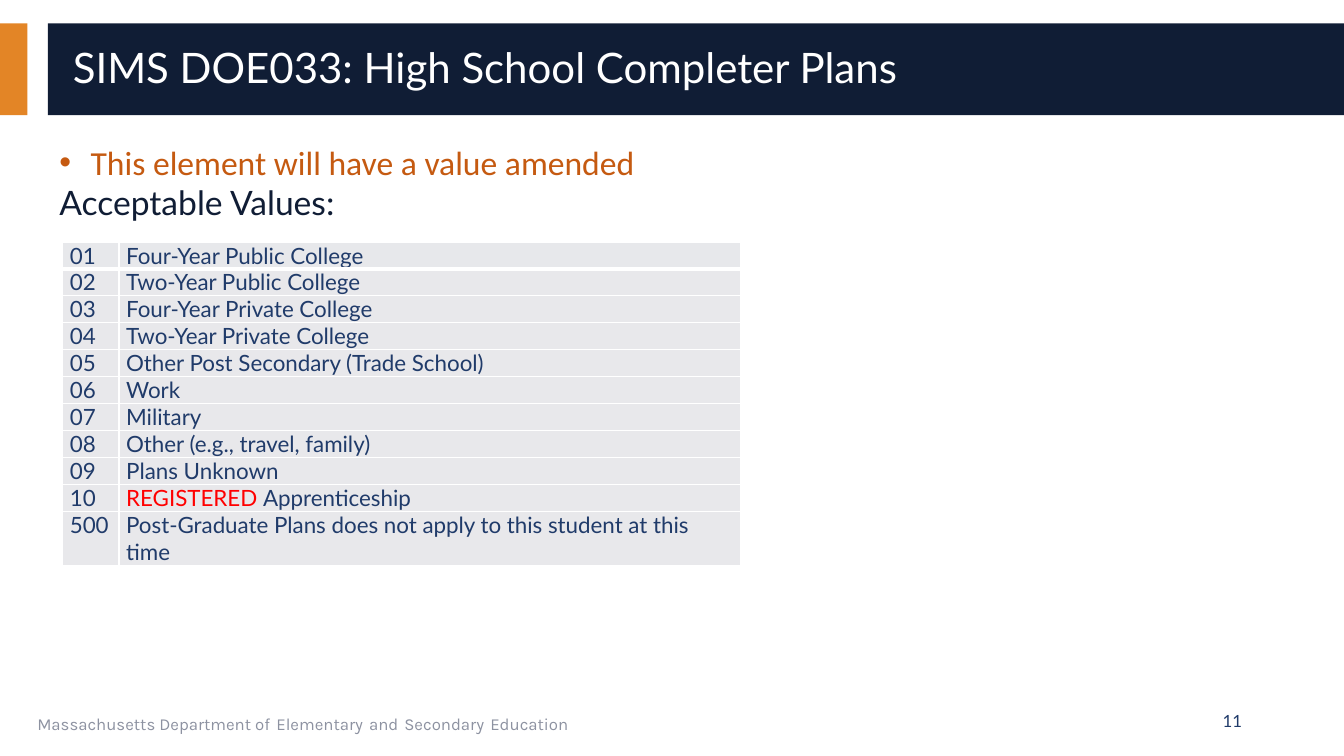
from dataclasses import dataclass

import lxml.etree
import pptx
import pptx.dml.color
import pptx.enum.shapes
import pptx.enum.text
import pptx.oxml.ns
import pptx.util
from pptx.dml.color import RGBColor
from pptx.enum.text import MSO_ANCHOR, MSO_AUTO_SIZE, PP_ALIGN
from pptx.util import Cm

NAVY = RGBColor(0x10, 0x1D, 0x35)
BLUE = RGBColor(0x20, 0x3B, 0x6A)
ORANGE = RGBColor(0xE3, 0x85, 0x26)
RUST = RGBColor(0xC5, 0x5A, 0x11)
RED = RGBColor(0xFF, 0x00, 0x00)
GREY = RGBColor(0x8D, 0x92, 0xA1)
CELL_GREY = RGBColor(0xE8, 0xE8, 0xEB)
FIRST_ROW_GREY = RGBColor(0xE7, 0xE8, 0xEB)
WHITE = RGBColor(0xFF, 0xFF, 0xFF)


@dataclass(frozen=True)
class Bar:
    left: float
    width: float
    color: RGBColor


@dataclass(frozen=True)
class PlanValue:
    code: str
    meaning: str
    amended: str = ""
    height: float = 0.68


BARS = [Bar(0, 0.69, ORANGE), Bar(1.21, 32.66, NAVY)]

PLAN_VALUES = [
    PlanValue("01", "Four-Year Public College", height=0.66),
    PlanValue("02", "Two-Year Public College"),
    PlanValue("03", "Four-Year Private College"),
    PlanValue("04", "Two-Year Private College"),
    PlanValue("05", "Other Post Secondary (Trade School)"),
    PlanValue("06", "Work"),
    PlanValue("07", "Military"),
    PlanValue("08", "Other (e.g., travel, family)"),
    PlanValue("09", "Plans Unknown"),
    PlanValue("10", "Apprenticeship", amended="REGISTERED "),
    PlanValue("500", "Post-Graduate Plans does not apply to this student at this time",
              height=1.35),
]


def write(paragraph, text: str, *, size: float = 16, color: RGBColor = BLUE,
          font: str = "Lato") -> None:
    run = paragraph.add_run()
    run.text = text
    run.font.size = pptx.util.Pt(size)
    run.font.name = font
    run.font.color.rgb = color


def place(shape, left: float, top: float, width: float, height: float) -> None:
    shape.left, shape.top = Cm(left), Cm(top)
    shape.width, shape.height = Cm(width), Cm(height)


def add_xml(parent, tag: str, **attributes: str):
    return lxml.etree.SubElement(parent, pptx.oxml.ns.qn(tag), attributes)


def set_bullet(paragraph, mark: str, indent: float) -> None:
    properties = paragraph._p.get_or_add_pPr()
    properties.set("marL", str(Cm(indent)))
    properties.set("indent", str(-Cm(indent)))
    if mark:
        add_xml(properties, "a:buFont", typeface="Arial")
        add_xml(properties, "a:buChar", char=mark)
    else:
        add_xml(properties, "a:buNone")
    paragraph.space_before = pptx.util.Pt(0)


def format_cell(cell, fill: RGBColor, bottom_width: float) -> None:
    properties = cell._tc.get_or_add_tcPr()
    for side, width in (("L", 1), ("R", 1), ("T", 1), ("B", bottom_width)):
        border = add_xml(properties, f"a:ln{side}", w=str(pptx.util.Pt(width)))
        add_xml(add_xml(border, "a:solidFill"), "a:srgbClr", val=str(WHITE))
    cell.fill.solid()
    cell.fill.fore_color.rgb = fill
    cell.margin_left = cell.margin_right = Cm(0.18)
    cell.margin_top = cell.margin_bottom = Cm(0)


def add_bar(slide, bar: Bar) -> None:
    band = slide.shapes.add_shape(pptx.enum.shapes.MSO_SHAPE.RECTANGLE,
                                  Cm(bar.left), Cm(0.59), Cm(bar.width), Cm(2.31))
    band.shadow.inherit = False
    band.fill.solid()
    band.fill.fore_color.rgb = bar.color
    band.line.fill.background()
    # Bars lie behind the title
    slide.shapes.title.element.addprevious(band.element)


def add_values_table(slide, values: list[PlanValue]) -> None:
    table = slide.shapes.add_table(len(values), 2, Cm(1.58), Cm(6.1), Cm(17.09),
                                   Cm(sum(value.height for value in values))).table
    table.first_row = table.horz_banding = False
    table.columns[0].width, table.columns[1].width = Cm(1.42), Cm(15.67)
    for index, value in enumerate(values):
        table.rows[index].height = Cm(value.height)
        code, meaning = table.rows[index].cells
        for cell in (code, meaning):
            format_cell(cell, CELL_GREY if index else FIRST_ROW_GREY, 1 if index else 3)
        write(code.text_frame.paragraphs[0], value.code)
        if value.amended:
            write(meaning.text_frame.paragraphs[0], value.amended, color=RED)
        write(meaning.text_frame.paragraphs[0], value.meaning)


def add_footer_box(slide, left: float, width: float):
    frame = slide.shapes.add_textbox(Cm(left), Cm(17.65), Cm(width), Cm(1.02)).text_frame
    frame.word_wrap = True
    return frame


def main() -> None:
    deck = pptx.Presentation()
    deck.slide_width, deck.slide_height = Cm(33.87), Cm(19.05)
    slide = deck.slides.add_slide(deck.slide_layouts[1])

    # Heading
    for bar in BARS:
        add_bar(slide, bar)
    title = slide.shapes.title
    place(title, 1.58, 0.81, 31.6, 1.88)
    title.text_frame.auto_size = MSO_AUTO_SIZE.NONE
    title.text_frame.vertical_anchor = MSO_ANCHOR.MIDDLE
    heading = title.text_frame.paragraphs[0]
    heading.alignment = PP_ALIGN.LEFT
    heading.line_spacing = 0.9
    write(heading, "SIMS DOE033: High School Completer Plans", size=30, color=WHITE)

    # Introduction
    introduction = slide.placeholders[1]
    place(introduction, 1.24, 3.45, 31.42, 8.97)
    introduction.text_frame.auto_size = MSO_AUTO_SIZE.NONE
    change = introduction.text_frame.paragraphs[0]
    set_bullet(change, "•", 0.79)
    write(change, "This element will have a value amended", size=24, color=RUST, font="Calibri")
    values_label = introduction.text_frame.add_paragraph()
    set_bullet(values_label, "", 0)
    write(values_label, "Acceptable Values:", size=24, color=NAVY)

    add_values_table(slide, PLAN_VALUES)

    # Footer: small words set apart by wider spaces
    department = add_footer_box(slide, 0.69, 21.44).paragraphs[0]
    for index, words in enumerate(
            ["Massachusetts Department of", "Elementary", "and", "Secondary", "Education"]):
        if index:
            write(department, " ", size=18, font="Karla")
        write(department, words, size=12, color=GREY, font="Karla")

    page_frame = add_footer_box(slide, 23.93, 7.62)
    page_frame.vertical_anchor = MSO_ANCHOR.MIDDLE
    page_number = page_frame.paragraphs[0]
    page_number.alignment = PP_ALIGN.RIGHT
    write(page_number, "11", size=12)

    deck.save("out.pptx")


if __name__ == "__main__":
    main()
